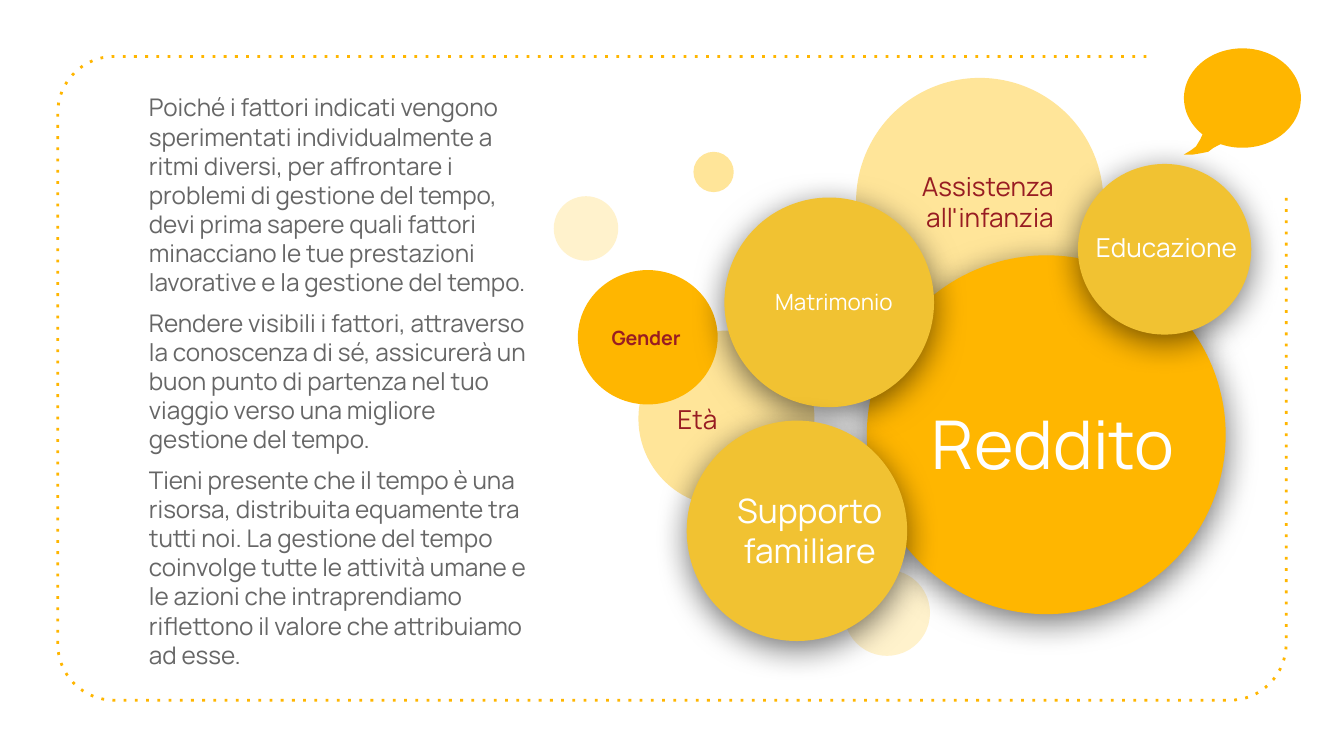
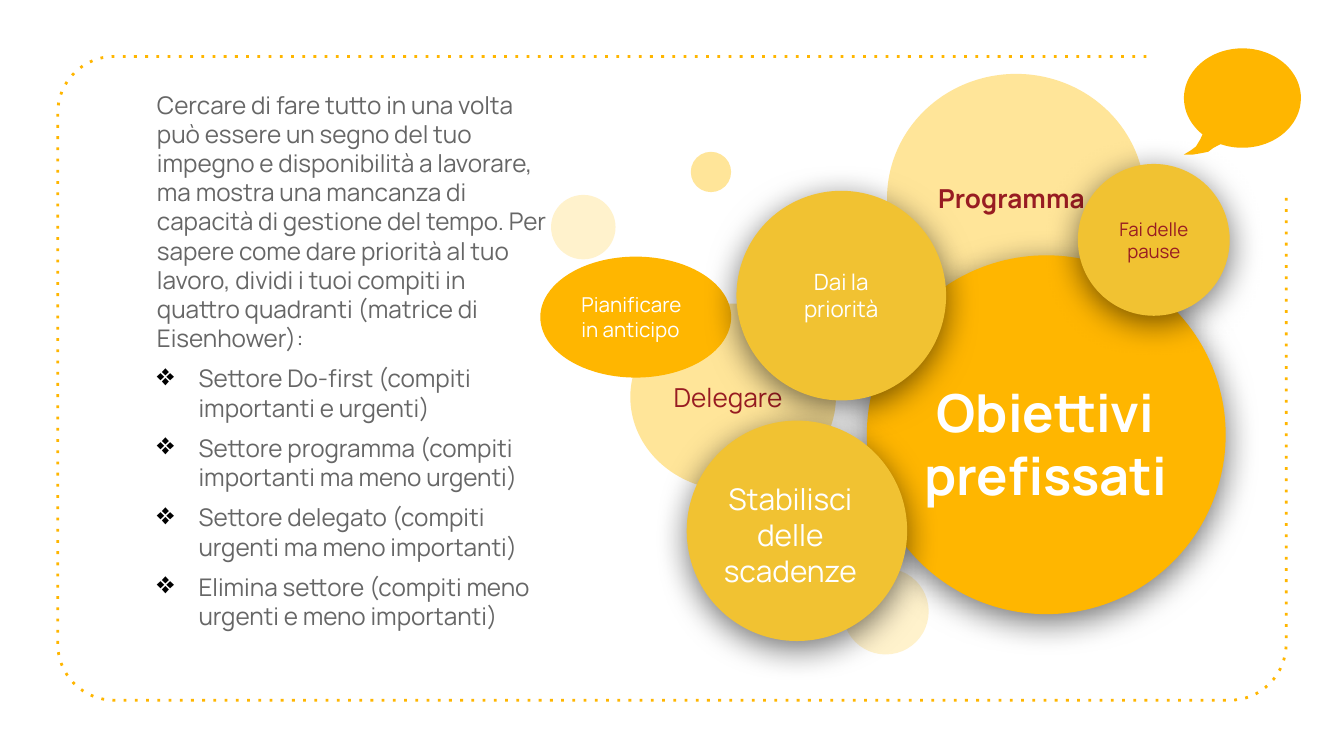
from math import cos, radians, sin

from lxml import etree
from pptx import Presentation
from pptx import util as u
from pptx.dml.color import RGBColor
from pptx.enum import dml, shapes, text
from pptx.oxml.ns import qn

# Look
FONT = "Manrope"
AMBER, GOLD, SAND, CREAM = "FFB600", "F1C232", "FFE599", "FFF2CC"
RED, GREY, WHITE, BLACK = "981C22", "666666", "FFFFFF", "000000"
ALIGN = {"l": text.PP_ALIGN.LEFT, "c": text.PP_ALIGN.CENTER, "r": text.PP_ALIGN.RIGHT}
WIDTH = 10
HEIGHT = WIDTH * 9 / 16
INDENT = 0.31

# Content: boxes are left, top, width, height in inches.
# flat: box, fill, and label (words, size, colour, align, bold) or None
# raised: circle box, fill, label box, label
GOALS_BOX = (6.45, 1.9, 2.67, 2.67)
SUPPORT_BOX = (5.11, 3.13, 1.64, 1.64)
SLIDES = [
    {
        "flat": [
            ((6.28, 4.24, 0.64, 0.64), CREAM, None),
            ((4.12, 1.46, 0.48, 0.48), CREAM, None),
            ((4.75, 2.46, 1.31, 1.31), SAND, ("Età", 14, RED, "l", False)),
            ((6.37, 0.58, 1.84, 1.84), SAND, ("Assistenza all'infanzia", 14, RED, "r", False)),
            ((4.3, 2.01, 1.04, 1), AMBER, ("Gender", 10.5, RED, "l", True)),
            ((5.16, 1.13, 0.3, 0.3), SAND, None),
        ],
        "raised": [
            (GOALS_BOX, AMBER, (6.76, 2.66, 2.15, 1.27), ("Reddito", 36, WHITE, "c", False)),
            ((5.39, 1.47, 1.56, 1.56), GOLD, (5.64, 1.73, 1.13, 1.03),
             ("Matrimonio", 12, WHITE, "c", False)),
            (SUPPORT_BOX, GOLD, (5.34, 3.43, 1.37, 1.03),
             ("Supporto familiare", 18, WHITE, "c", False)),
            ((8.02, 1.22, 1.29, 1.27), GOLD, (7.98, 1.37, 1.4, 0.93),
             ("Educazione", 14, WHITE, "c", False)),
        ],
        "body_at": (1.01, 0.59, 3.1, 4.53),
        "body": [
            "Poiché i fattori indicati vengono sperimentati individualmente a ritmi diversi, "
            "per affrontare i problemi di gestione del tempo, devi prima sapere quali fattori "
            "minacciano le tue prestazioni lavorative e la gestione del tempo.",
            "Rendere visibili i fattori, attraverso la conoscenza di sé, assicurerà un buon "
            "punto di partenza nel tuo viaggio verso una migliore gestione del tempo.",
            "Tieni presente che il tempo è una risorsa, distribuita equamente tra tutti noi. "
            "La gestione del tempo coinvolge tutte le attività umane e le azioni che "
            "intraprendiamo riflettono il valore che attribuiamo ad esse.",
        ],
        "bullets": [],
    },
    {
        "flat": [
            ((6.27, 4.23, 0.64, 0.64), CREAM, None),
            ((4.1, 1.45, 0.48, 0.48), CREAM, None),
            ((4.69, 2.26, 1.53, 1.39), SAND, ("Delegare", 14, RED, "l", False)),
            ((6.6, 0.55, 1.92, 1.85), SAND, ("Programma", 14, RED, "l", True)),
            ((4.02, 1.91, 1.42, 0.9), AMBER, ("Pianificare in anticipo", 11, WHITE, "l", False)),
            ((5.14, 1.13, 0.3, 0.3), SAND, None),
        ],
        "raised": [
            (GOALS_BOX, AMBER, (6.76, 2.66, 2.04, 1.27),
             ("Obiettivi prefissati", 28, WHITE, "c", True)),
            ((5.48, 1.42, 1.56, 1.56), GOLD, (5.73, 1.68, 1.06, 1.03),
             ("Dai la priorità", 12, WHITE, "c", False)),
            (SUPPORT_BOX, GOLD, (5.24, 3.43, 1.28, 1.1),
             ("Stabilisci delle scadenze", 16, WHITE, "c", False)),
            ((8.02, 1.22, 1.13, 1.13), GOLD, (8.2, 1.41, 0.77, 0.75),
             ("Fai delle pause", 10, RED, "c", False)),
        ],
        "body_at": (1.07, 0.57, 3.1, 4.53),
        "body": [
            "Cercare di fare tutto in una volta può essere un segno del tuo impegno e "
            "disponibilità a lavorare, ma mostra una mancanza di capacità di gestione del "
            "tempo. Per sapere come dare priorità al tuo lavoro, dividi i tuoi compiti in "
            "quattro quadranti (matrice di Eisenhower):",
        ],
        "bullets": [
            "Settore Do-first (compiti importanti e urgenti)",
            "Settore programma (compiti importanti ma meno urgenti)",
            "Settore delegato (compiti urgenti ma meno importanti)",
            "Elimina settore (compiti meno urgenti e meno importanti)",
        ],
    },
]


def rgb(color):
    return RGBColor.from_string(color)


def inches(values):
    return [u.Inches(v) for v in values]


def add_xml(parent, tag, **attrs):
    return etree.SubElement(parent, qn(tag), {k: str(v) for k, v in attrs.items()})


def paint(sp, fill):
    sp.shadow.inherit = False
    sp.fill.solid()
    sp.fill.fore_color.rgb = rgb(fill)
    sp.line.fill.background()


def write(p, words, size, color, align="l", bold=False):
    p.alignment = ALIGN[align]
    r = p.add_run()
    r.text = words
    for name, value in {"name": FONT, "size": u.Pt(size), "bold": bold}.items():
        setattr(r.font, name, value)
    r.font.color.rgb = rgb(color)


def set_frame(sp, anchor):
    tf = sp.text_frame
    margins = {f"margin_{side}": u.Inches(0.1) for side in ("left", "top", "right", "bottom")}
    for name, value in {"word_wrap": True, "vertical_anchor": anchor, **margins}.items():
        setattr(tf, name, value)
    return tf


def add_label(sp, label):
    write(set_frame(sp, text.MSO_ANCHOR.MIDDLE).paragraphs[0], *label)


def add_shape(s, kind, box, fill):
    sp = s.shapes.add_shape(kind, *inches(box))
    paint(sp, fill)
    return sp


def add_circle(s, box, fill):
    return add_shape(s, shapes.MSO_SHAPE.OVAL, box, fill)


def add_raised(s, box, fill, label_box, label):
    sp = add_circle(s, box, fill)
    effects = sp._element.spPr.find(qn("a:effectLst"))
    shadow = add_xml(effects, "a:outerShdw", blurRad=u.Pt(18), dist=u.Pt(4),
                     dir=90 * 60000, algn="bl", rotWithShape=0)
    add_xml(add_xml(shadow, "a:srgbClr", val=BLACK), "a:alpha", val=54000)
    # The amber circle carries its label on a filled rectangle
    if fill == AMBER:
        holder = add_shape(s, shapes.MSO_SHAPE.RECTANGLE, label_box, fill)
    else:
        holder = s.shapes.add_textbox(*inches(label_box))
    add_label(holder, label)


def arc(cx, cy, rx, ry, start, end, steps):
    angles = [radians(start + (end - start) * i / steps) for i in range(steps + 1)]
    return [(cx + rx * cos(a), cy + ry * sin(a)) for a in angles]


def add_outline(s, points, close):
    points = [inches(pt) for pt in points]
    builder = s.shapes.build_freeform(*points[0])
    builder.add_line_segments(points[1:], close=close)
    return builder.convert_to_shape()


def add_border(s):
    left, right, bottom, radius = 0.85, 9.15, 4.79, 0.42
    corners = [(left, 0.84, 270), (left, bottom, 180), (right, bottom, 90)]
    points = [(8.53, 0.42)]
    for cx, cy, start in corners:
        points += arc(cx, cy, radius, radius, start, start - 90, 16)
    sp = add_outline(s, points + [(9.57, 1.46)], close=False)
    sp.shadow.inherit = False
    sp.fill.background()
    sp.line.color.rgb = rgb(AMBER)
    sp.line.width = u.Pt(1.5)
    sp.line.dash_style = dml.MSO_LINE.ROUND_DOT
    # Widely spaced dots have no enum member
    sp._element.spPr.find(".//" + qn("a:prstDash")).set("val", "dot")


def add_speech_bubble(s):
    body = arc(9.245, 0.73, 0.435, 0.37, 112, -227, 90)
    tail = [(8.93, 1.04), (8.9, 1.09), (8.86, 1.12), (8.81, 1.15),
            (8.88, 1.15), (8.94, 1.14), (8.99, 1.13), (9.03, 1.1)]
    paint(add_outline(s, body + tail, close=True), AMBER)


def add_body(s, box, paragraphs, bullets):
    tf = set_frame(s.shapes.add_textbox(*inches(box)), text.MSO_ANCHOR.TOP)
    for i, words in enumerate(paragraphs + bullets):
        p = tf.add_paragraph() if i else tf.paragraphs[0]
        write(p, words, 13, GREY)
        p.space_before = u.Pt(6)
        if i >= len(paragraphs):
            pPr = p._p.get_or_add_pPr()
            pPr.set("marL", str(u.Inches(INDENT)))
            pPr.set("indent", str(-u.Inches(INDENT)))
            add_xml(add_xml(pPr, "a:buClr"), "a:srgbClr", val=BLACK)
            add_xml(pPr, "a:buSzPct", val=125000)
            add_xml(pPr, "a:buChar", char="❖")


def main():
    prs = Presentation()
    prs.slide_width, prs.slide_height = inches((WIDTH, HEIGHT))
    for page in SLIDES:
        s = prs.slides.add_slide(prs.slide_layouts[6])
        add_border(s)
        # Flat circles behind, raised circles in front
        for box, fill, label in page["flat"]:
            sp = add_circle(s, box, fill)
            if label:
                add_label(sp, label)
        for item in page["raised"]:
            add_raised(s, *item)
        add_speech_bubble(s)
        add_body(s, page["body_at"], page["body"], page["bullets"])
    prs.save("out.pptx")


if __name__ == "__main__":
    main()
